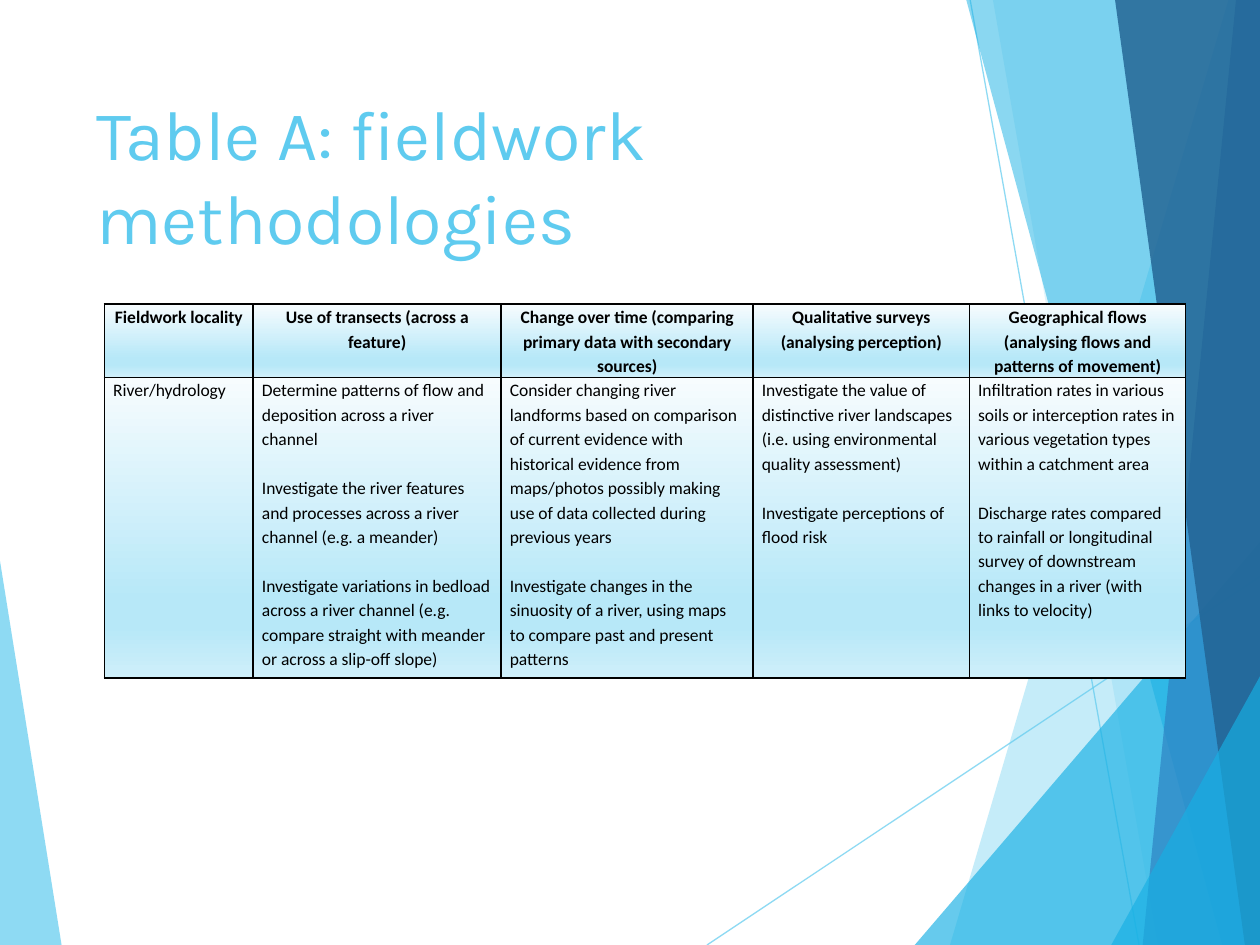
from lxml import etree
from pptx import Presentation
from pptx.dml.color import RGBColor
from pptx.enum.text import MSO_ANCHOR, MSO_AUTO_SIZE, PP_ALIGN
from pptx.enum.shapes import MSO_CONNECTOR
from pptx.oxml import parse_xml
from pptx.oxml.ns import nsdecls, qn
from pptx.util import Pt

SKY, CYAN, BLUE, NAVY = "5FCBEF", "17B0E4", "2E83C3", "226292"
GRADIENT = [(0, "F7FCFE"), (74, "B7E8F8"), (83, "B7E8F8"), (100, "CFEFFA")]
COLUMN_WIDTHS = [85, 141.7, 144, 123.6, 123.6]
ROW_HEIGHTS = [41.7, 172]

# Top corner x, top y, bottom corner x, colour, opacity; each runs to the right edge
FACETS = [
    (302, 0, 142.9, SKY, 36),
    (167.4, 0, 261.7, SKY, 20),
    (320.7, 308.9, 122.7, CYAN, 66),
    (152.2, 0, 298.4, CYAN, 50),
    (306.3, 0, 253, BLUE, 70),
    (237.2, 0, 311.4, NAVY, 82),
    (320.7, 385.2, 235, CYAN, 66),
]
RAYS = [(4, 540, 320.7, 329), (154.4, 0, 250.9, 540)]

# Heading, then the paragraphs below it
METHODS = [
    ("Fieldwork locality", ["River/hydrology"]),
    ("Use of transects (across a feature)", [
        "Determine patterns of flow and deposition across a river channel",
        "Investigate the river features and processes across a river channel "
        "(e.g. a meander)",
        "Investigate variations in bedload across a river channel (e.g. compare "
        "straight with meander or across a slip-off slope)"]),
    ("Change over time (comparing primary data with secondary sources)", [
        "Consider changing river landforms based on comparison of current evidence "
        "with historical evidence from maps/photos possibly making use of data "
        "collected during previous years",
        "Investigate changes in the sinuosity of a river, using maps to compare "
        "past and present patterns"]),
    ("Qualitative surveys (analysing perception)", [
        "Investigate the value of distinctive river landscapes (i.e. using "
        "environmental quality assessment)",
        "Investigate perceptions of flood risk"]),
    ("Geographical flows (analysing flows and patterns of movement)", [
        "Infiltration rates in various soils or interception rates in various "
        "vegetation types within a catchment area",
        "Discharge rates compared to rainfall or longitudinal survey of downstream "
        "changes in a river (with links to velocity)"]),
]


def rgb(value):
    return RGBColor.from_string(value)


def set_attrs(obj, values):
    for name, value in values.items():
        setattr(obj, name, value)


def set_alpha(fill, percent):
    color = fill._xPr.find(".//" + qn("a:srgbClr"))
    etree.SubElement(color, qn("a:alpha")).set("val", str(percent * 1000))


def add_polygon(slide, left, top, points, color, opacity):
    corners = [(Pt(left + x), Pt(top + y)) for x, y in points]
    builder = slide.shapes.build_freeform(*corners[0])
    builder.add_line_segments(corners[1:], close=True)
    sp = builder.convert_to_shape()
    sp.shadow.inherit = False
    sp.fill.solid()
    sp.fill.fore_color.rgb = rgb(color)
    set_alpha(sp.fill, opacity)
    sp.line.fill.background()


def add_ray(slide, left, top, ray):
    x1, y1, x2, y2 = ray
    line = slide.shapes.add_connector(
        MSO_CONNECTOR.STRAIGHT, Pt(left + x1), Pt(top + y1), Pt(left + x2), Pt(top + y2))
    line.line.width = Pt(0.75)
    line.line.color.rgb = rgb(SKY)
    set_alpha(line.line.fill, 70)
    etree.SubElement(line.element.spPr, qn("a:effectLst"))


def add_left_wedge(slide, left, top, width, height):
    add_polygon(slide, left, top, [(0, 0), (width, height), (0, height)], SKY, 70)


def add_right_facets(slide, left, top, width, height):
    for ray in RAYS:
        add_ray(slide, left, top, ray)
    for x_top, y_top, x_bottom, color, opacity in FACETS:
        points = [(x_top, y_top), (x_bottom, height), (width, height), (width, y_top)]
        add_polygon(slide, left, top, points, color, opacity)


def place_title(slide, left, top, width, height):
    title = slide.shapes.title
    title.element.getparent().append(title.element)  # in front of the facets
    set_attrs(title, {"left": Pt(left), "top": Pt(top),
                      "width": Pt(width), "height": Pt(height)})
    tf = title.text_frame
    set_attrs(tf, {"text": "Table A: fieldwork methodologies", "word_wrap": True,
                   "auto_size": MSO_AUTO_SIZE.NONE, "vertical_anchor": MSO_ANCHOR.TOP})
    p = tf.paragraphs[0]
    p.alignment = PP_ALIGN.LEFT
    set_attrs(p.runs[0].font, {"name": "Karla", "size": Pt(40)})
    p.runs[0].font.color.rgb = rgb(SKY)


def style_cell(cell):
    """Give the cell black borders and the vertical gradient."""
    set_attrs(cell, {"margin_left": Pt(5), "margin_right": Pt(5),
                     "margin_top": 0, "margin_bottom": 0})
    tcPr = cell._tc.get_or_add_tcPr()
    for side in ("lnL", "lnR", "lnT", "lnB"):
        tcPr.append(parse_xml(
            f'<a:{side} {nsdecls("a")} w="{Pt(1)}"><a:solidFill>'
            f'<a:srgbClr val="000000"/></a:solidFill></a:{side}>'))
    stops = "".join(f'<a:gs pos="{pos * 1000}"><a:srgbClr val="{color}"/></a:gs>'
                    for pos, color in GRADIENT)
    tcPr.append(parse_xml(
        f'<a:gradFill {nsdecls("a")} rotWithShape="1"><a:gsLst>{stops}</a:gsLst>'
        '<a:lin ang="5400000" scaled="0"/></a:gradFill>'))


def fill_cell(cell, texts, heading):
    style_cell(cell)
    tf = cell.text_frame
    for i, text in enumerate(texts):
        p = tf.add_paragraph() if i else tf.paragraphs[0]
        set_attrs(p, {"alignment": PP_ALIGN.CENTER if heading else PP_ALIGN.LEFT,
                      "line_spacing": 1.15, "space_before": Pt(14 if i else 0)})
        r = p.add_run()
        r.text = text
        set_attrs(r.font, {"name": "Calibri", "size": Pt(10), "bold": heading})
        r.font.color.rgb = rgb("000000")


def add_methods_table(slide, left, top):
    table = slide.shapes.add_table(
        len(ROW_HEIGHTS), len(METHODS), Pt(left), Pt(top),
        Pt(sum(COLUMN_WIDTHS)), Pt(sum(ROW_HEIGHTS))).table
    set_attrs(table, {"first_row": False, "horz_banding": False})
    for row, height in zip(table.rows, ROW_HEIGHTS):
        row.height = Pt(height)
    for col, (heading, paragraphs) in enumerate(METHODS):
        table.columns[col].width = Pt(COLUMN_WIDTHS[col])
        fill_cell(table.cell(0, col), [heading], True)
        fill_cell(table.cell(1, col), paragraphs, False)


def main():
    prs = Presentation()
    set_attrs(prs, {"slide_width": Pt(720), "slide_height": Pt(540)})
    slide = prs.slides.add_slide(prs.slide_layouts[5])
    add_left_wedge(slide, -0.7, 316, 36, 224.5)
    add_right_facets(slide, 400, 0, 320.7, 540)
    place_title(slide, 48, 48, 500, 104)
    add_methods_table(slide, 59.7, 173.7)
    prs.save("out.pptx")


if __name__ == "__main__":
    main()
